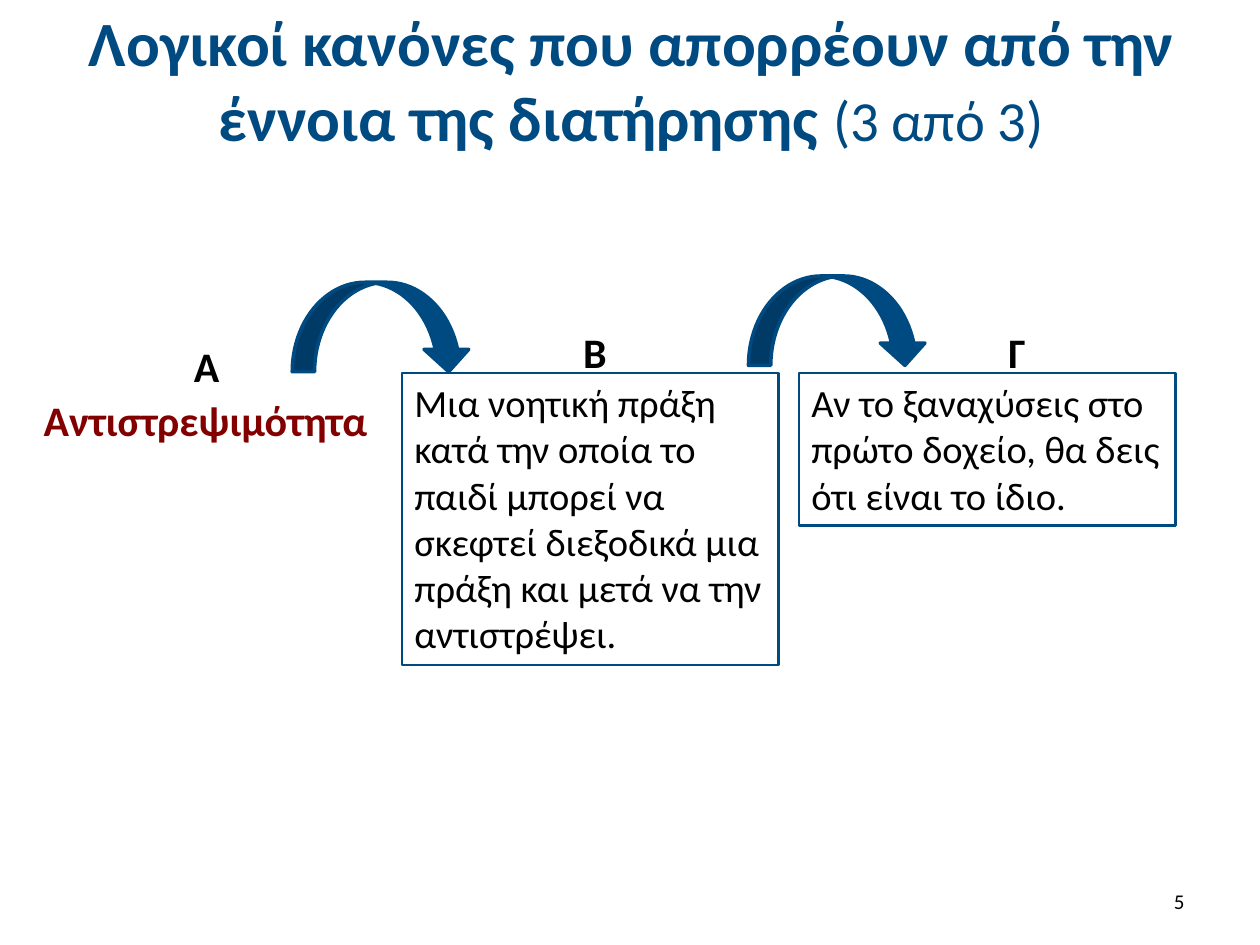
from pptx import Presentation
from pptx.dml.color import RGBColor
from pptx.enum.shapes import MSO_SHAPE
from pptx.enum.text import MSO_ANCHOR, MSO_AUTO_SIZE, PP_ALIGN
from pptx.util import Pt

CURVED_ARROW, RECTANGLE = MSO_SHAPE.CURVED_DOWN_ARROW, MSO_SHAPE.RECTANGLE
TOP, MIDDLE = MSO_ANCHOR.TOP, MSO_ANCHOR.MIDDLE
FIXED, GROW = MSO_AUTO_SIZE.NONE, MSO_AUTO_SIZE.SHAPE_TO_FIT_TEXT
LEFT, CENTER, RIGHT = PP_ALIGN.LEFT, PP_ALIGN.CENTER, PP_ALIGN.RIGHT
TITLE_ONLY = 5

BLUE, RED, BLACK = "004A82", "820000", "000000"
LABEL_SIZE = (49, 39.6)
ARROW_SIZE = (102.2, 51.1)
CARD_TOP, CARD_WIDTH = 213.1, 215.3


def color(hex_code):
    return RGBColor.from_string(hex_code)


def write(frame, runs, align=LEFT, anchor=TOP, auto_size=FIXED):
    """Fill a text frame with one paragraph of (text, size, colour, bold) runs."""
    settings = {"word_wrap": True, "vertical_anchor": anchor, "auto_size": auto_size}
    for name, value in settings.items():
        setattr(frame, name, value)
    paragraph = frame.paragraphs[0]
    paragraph.alignment = align
    for text, size, hex_code, bold in runs:
        run = paragraph.add_run()
        run.text = text
        for name, value in {"name": "Calibri", "size": Pt(size), "bold": bold}.items():
            setattr(run.font, name, value)
        run.font.color.rgb = color(hex_code)


def add_title(slide, box, heading, part):
    title = slide.shapes.title
    for name, value in zip(("left", "top", "width", "height"), box):
        setattr(title, name, Pt(value))
    write(title.text_frame, [(heading, 36, BLUE, True), (part, 32.4, BLUE, False)],
          CENTER, MIDDLE)


def add_text(slide, box, text, size=24, hex_code=BLACK, bold=True,
             align=CENTER, anchor=TOP):
    textbox = slide.shapes.add_textbox(*map(Pt, box))
    write(textbox.text_frame, [(text, size, hex_code, bold)], align, anchor)


def add_outlined(slide, kind, box, line_width):
    shape = slide.shapes.add_shape(kind, *map(Pt, box))
    shape.shadow.inherit = False
    shape.line.color.rgb = color(BLUE)
    shape.line.width = Pt(line_width)
    return shape


def add_arrow(slide, left, top):
    arrow = add_outlined(slide, CURVED_ARROW, (left, top, *ARROW_SIZE), 2)
    arrow.fill.solid()
    arrow.fill.fore_color.rgb = color(BLUE)


def add_card(slide, box, text):
    card = add_outlined(slide, RECTANGLE, box, 1.5)
    card.fill.background()
    write(card.text_frame, [(text, 22, BLACK, False)], auto_size=GROW)


def main():
    prs = Presentation()
    prs.slide_width, prs.slide_height = Pt(720), Pt(540)
    slide = prs.slides.add_slide(prs.slide_layouts[TITLE_ONLY])

    add_title(slide, (36.7, 9.4, 648, 71.3),
              "Λογικοί κανόνες που απορρέουν από την έννοια της διατήρησης ",
              "(3 από 3)")
    add_text(slide, (13.7, 221.8, 207.4, 39.6), "Αντιστρεψιμότητα", hex_code=RED)

    for left, top in ((167, 161.3), (427.7, 157.7)):
        add_arrow(slide, left, top)

    cards = (
        (229.7, 167, "Μια νοητική πράξη κατά την οποία το παιδί μπορεί να "
                     "σκεφτεί διεξοδικά μια πράξη και μετά να την αντιστρέψει."),
        (456.5, 87.1, "Αν το ξαναχύσεις στο πρώτο δοχείο, θα δεις ότι είναι το ίδιο."),
    )
    for left, height, text in cards:
        add_card(slide, (left, CARD_TOP, CARD_WIDTH, height), text)

    for letter, left, top in (("Α", 93.6, 190.8), ("Β", 315.4, 182.9), ("Γ", 556.6, 182.9)):
        add_text(slide, (left, top, *LABEL_SIZE), letter)

    add_text(slide, (516.2, 500.4, 167.8, 28.8), "5", size=12, bold=False,
             align=RIGHT, anchor=MIDDLE)
    prs.save("out.pptx")


if __name__ == "__main__":
    main()
